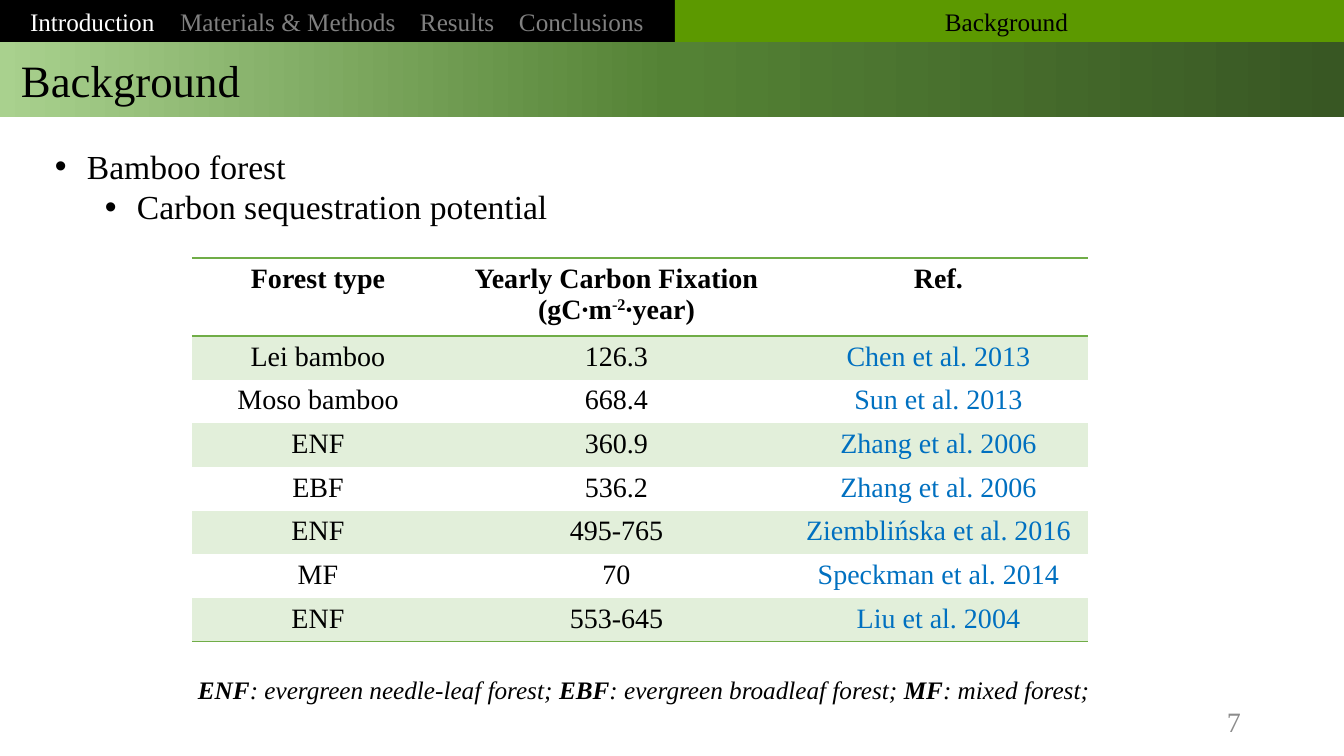
import copy

import lxml.etree
import pptx
import pptx.dml.color
import pptx.enum.shapes
import pptx.enum.text
import pptx.oxml.ns
import pptx.util

PX_PER_INCH = 100.8
FONT = "Times New Roman"
ALIGN = pptx.enum.text.PP_ALIGN
ANCHOR = pptx.enum.text.MSO_ANCHOR
qn = pptx.oxml.ns.qn

NAVIGATION = ["Introduction", "Materials & Methods", "Results", "Conclusions"]
NAVIGATION_TABS = [150, 390, 489]
BULLETS = ["Bamboo forest", "Carbon sequestration potential"]
FORESTS = [
    ("Lei bamboo", "126.3", "Chen et al. 2013"),
    ("Moso bamboo", "668.4", "Sun et al. 2013"),
    ("ENF", "360.9", "Zhang et al. 2006"),
    ("EBF", "536.2", "Zhang et al. 2006"),
    ("ENF", "495-765", "Ziemblińska et al. 2016"),
    ("MF", "70", "Speckman et al. 2014"),
    ("ENF", "553-645", "Liu et al. 2004"),
]
ABBREVIATIONS = [
    ("ENF", ": evergreen needle-leaf forest; "),
    ("EBF", ": evergreen broadleaf forest; "),
    ("MF", ": mixed forest;"),
]


def px(length):
    return pptx.util.Emu(round(length * 914400 / PX_PER_INCH))


def colour(value):
    return pptx.dml.color.RGBColor.from_string(value)


def child(parent, tag, **attributes):
    return lxml.etree.SubElement(parent, qn(tag), attributes)


def style(para, size, ink="000000", align=ALIGN.LEFT, bold=False):
    para.alignment = align
    para.font.name = FONT
    para.font.size = pptx.util.Pt(size)
    para.font.bold = bold
    para.font.color.rgb = colour(ink)


def add_span(para, text):
    span = para.add_run()
    span.text = text
    return span


def set_frame(frame, left=10, right=10, anchor=ANCHOR.MIDDLE):
    frame.word_wrap = True
    frame.auto_size = pptx.enum.text.MSO_AUTO_SIZE.NONE
    frame.vertical_anchor = anchor
    frame.margin_left, frame.margin_right = px(left), px(right)
    frame.margin_top = frame.margin_bottom = px(5)


def add_text_box(page, box, anchor=ANCHOR.TOP):
    frame = page.shapes.add_textbox(*map(px, box)).text_frame
    set_frame(frame, anchor=anchor)
    return frame


def add_bar(page, box, fill, left, right):
    bar = page.shapes.add_shape(pptx.enum.shapes.MSO_SHAPE.RECTANGLE, *map(px, box))
    bar.shadow.inherit = False
    bar.fill.solid()
    bar.fill.fore_color.rgb = colour(fill)
    bar.line.fill.background()
    set_frame(bar.text_frame, left, right)
    return bar.text_frame.paragraphs[0]


def add_navigation(page, box):
    left, top, width, height = box
    split = 675
    para = add_bar(page, (left, top, split, height), "000000", 30, 0)
    style(para, 18, "808080")
    current, *others = NAVIGATION
    add_span(para, current).font.color.rgb = colour("FFFFFF")
    for name in others:
        add_span(para, "\t" + name)
    tabs = lxml.etree.Element(qn("a:tabLst"))
    for position in NAVIGATION_TABS:
        child(tabs, "a:tab", pos=str(px(position)), algn="l")
    para._p.get_or_add_pPr().insert(0, tabs)

    section = add_bar(page, (left + split, top, width - split, height), "5C9900", 0, 6)
    section.text = "Background"
    style(section, 18, align=ALIGN.CENTER)


def place_title(page, box):
    title = page.shapes.title
    title.left, title.top, title.width, title.height = map(px, box)
    title.fill.gradient()
    title.fill.gradient_angle = 0
    stops = title._element.spPr.find(".//" + qn("a:gsLst"))
    stops.append(copy.deepcopy(stops[-1]))
    shades = [(0, "A9D18E"), (0.5, "548235"), (1, "385723")]
    for stop, (position, shade) in zip(title.fill.gradient_stops, shades):
        stop.position = position
        stop.color.rgb = colour(shade)
    set_frame(title.text_frame, left=21)
    title.text_frame.text = "Background"
    style(title.text_frame.paragraphs[0], 32)


def add_bullets(page, box):
    frame = add_text_box(page, box)
    for level, text in enumerate(BULLETS):
        para = frame.add_paragraph() if level else frame.paragraphs[0]
        para.text = text
        para.level = level
        style(para, 24)
        properties = para._p.get_or_add_pPr()
        properties.set("marL", str(px(32 + 50 * level)))
        properties.set("indent", str(px(-32)))
        bullet_font = lxml.etree.Element(qn("a:buFont"), typeface="Arial")
        bullet = lxml.etree.Element(qn("a:buChar"), char="•")
        properties.insert(0, bullet_font)
        properties.insert(1, bullet)


def add_border(cell, side):
    line = child(cell._tc.get_or_add_tcPr(), side, w=str(pptx.util.Pt(1)))
    child(child(line, "a:solidFill"), "a:srgbClr", val="70AD47")


def fill_header(table):
    for cell, text in zip(table.rows[0].cells, ["Forest type", "Yearly Carbon Fixation", "Ref."]):
        cell.text = text
        add_border(cell, "a:lnT")
        add_border(cell, "a:lnB")
        cell.fill.background()
    unit = table.cell(0, 1).text_frame.add_paragraph()
    add_span(unit, "(gC∙m")
    add_span(unit, "-2")._r.get_or_add_rPr().set("baseline", "30000")
    add_span(unit, "∙year)")
    for cell in table.rows[0].cells:
        for para in cell.text_frame.paragraphs:
            style(para, 20, align=ALIGN.CENTER, bold=True)


def add_forest_table(page, box):
    left, top, width, height = box
    header = 78
    table = page.shapes.add_table(len(FORESTS) + 1, 3, *map(px, box)).table
    table.first_row = table.horz_banding = False
    table._tbl.tblPr.find(qn("a:tableStyleId")).text = "{2D5ABB26-0587-4C30-8999-92F81FD0307C}"
    for column, size in zip(table.columns, [252, 345, width - 597]):
        column.width = px(size)
    for index, row in enumerate(table.rows):
        row.height = px((height - header) / len(FORESTS) if index else header)
    fill_header(table)
    for index, forest in enumerate(FORESTS, 1):
        for cell, text, ink in zip(table.rows[index].cells, forest, ["000000", "000000", "0070C0"]):
            cell.text = text
            style(cell.text_frame.paragraphs[0], 20, ink, ALIGN.CENTER)
            if index == len(FORESTS):
                add_border(cell, "a:lnB")
            if index % 2:
                cell.fill.solid()
                cell.fill.fore_color.rgb = colour("E2EFDA")
            else:
                cell.fill.background()


def add_abbreviations(page, box):
    para = add_text_box(page, box).paragraphs[0]
    style(para, 18)
    para.font.italic = True
    for short, meaning in ABBREVIATIONS:
        add_span(para, short).font.bold = True
        add_span(para, meaning)


def add_page_number(page, box):
    para = add_text_box(page, box, ANCHOR.MIDDLE).paragraphs[0]
    para.text = "7"
    style(para, 20, "8C8C8C", ALIGN.RIGHT)


def main():
    deck = pptx.Presentation()
    deck.slide_width, deck.slide_height = px(1344), px(756)
    page = deck.slides.add_slide(deck.slide_layouts[5])
    add_navigation(page, (0, 0, 1344, 42))
    place_title(page, (0, 42, 1344, 75))
    add_bullets(page, (45, 141, 1228, 92))
    add_forest_table(page, (192, 258, 896, 384))
    add_abbreviations(page, (188, 669, 943, 72))
    add_page_number(page, (949, 701, 302, 40))
    deck.save("out.pptx")


if __name__ == "__main__":
    main()
